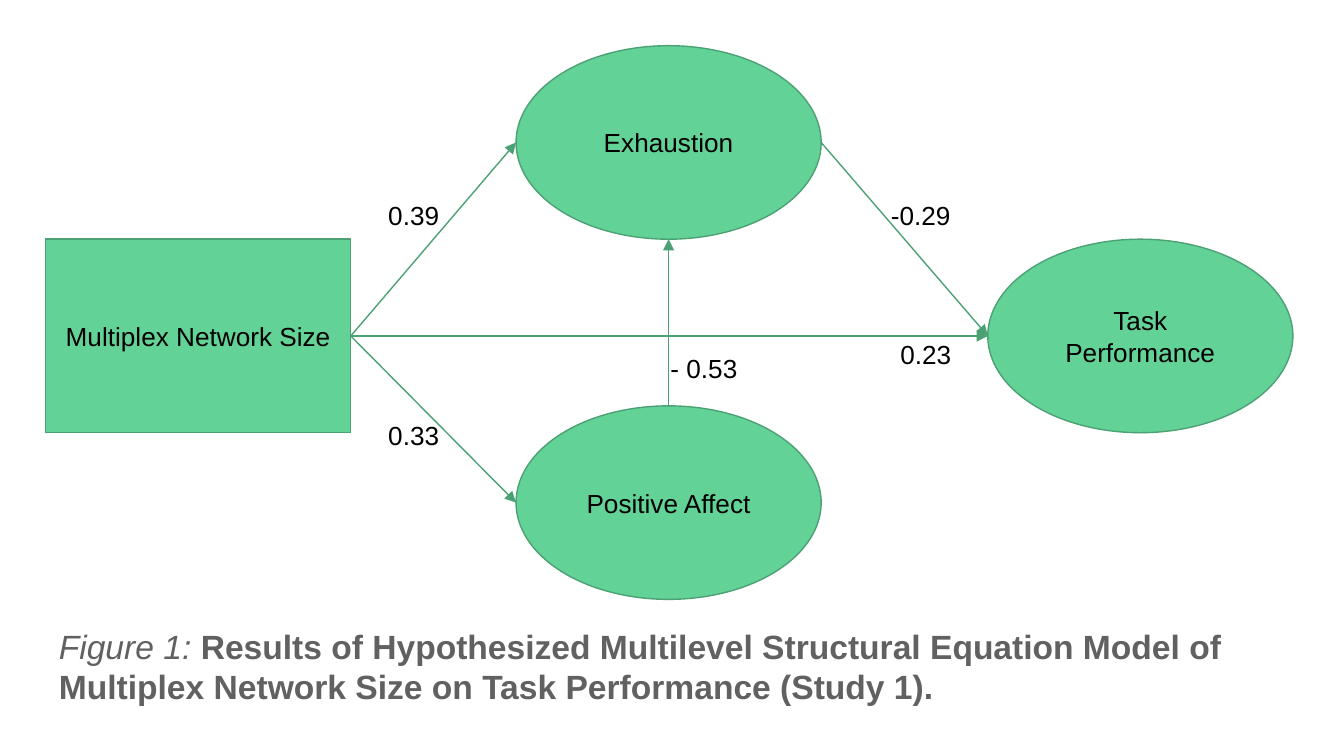
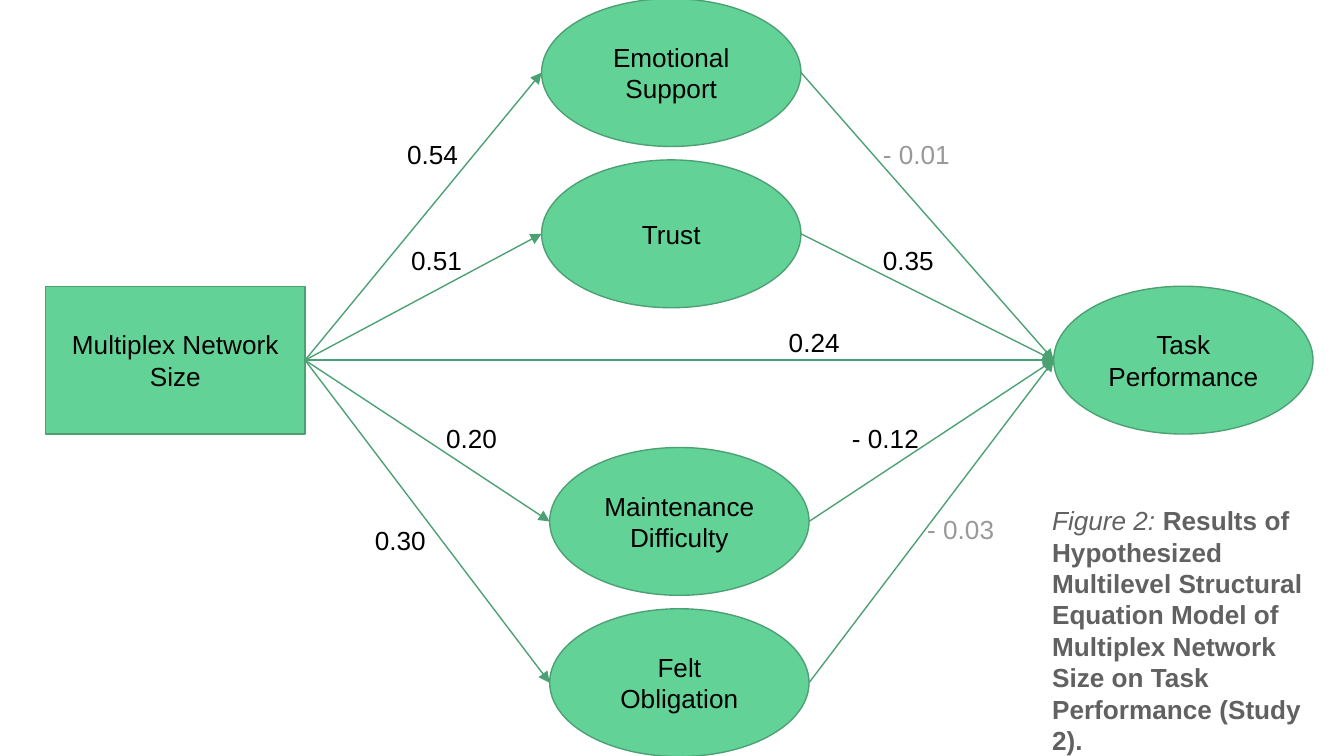
from dataclasses import dataclass
from lxml.etree import SubElement
from pptx import Presentation
from pptx.dml.color import RGBColor as RGB
from pptx.enum.shapes import MSO_CONNECTOR as LINE, MSO_SHAPE as SHAPE
from pptx.enum.text import MSO_ANCHOR as ANCHOR, PP_ALIGN as ALIGN
from pptx.oxml.ns import qn
from pptx.util import Inches, Pt


@dataclass(frozen=True)
class Theme:
    fill: RGB = RGB(0x63, 0xD2, 0x97)
    line: RGB = RGB(0x4B, 0xA1, 0x73)
    ink: RGB = RGB(0, 0, 0)
    faint: RGB = RGB(0x99, 0x99, 0x99)
    caption: RGB = RGB(0x61, 0x61, 0x61)
    font: str = "Arial"
    size: int = 14
    caption_sizes: tuple = (18, 14)
    weight: float = 0.75
    inset: float = 0.1
    label: tuple = (0.78, 0.31)


theme = Theme()
SOURCE, TARGET = "Multiplex Network Size", "Task Performance"
TITLE = ("Results of Hypothesized Multilevel Structural Equation Model of "
         "Multiplex Network Size on Task Performance (Study {}).")

# Nodes: name -> (column, row). Links: (from, to, coefficient, label left, label top).
figures = [
    dict(
        node=(2.27, 1.44), cols=(0.34, 3.84, 7.35), rows=(0.34, 1.78, 3.02),
        caption=(0.34, 4.63, 9.27, 0.65),
        nodes={"Exhaustion": (1, 0), "Positive Affect": (1, 2),
               TARGET: (2, 1), SOURCE: (0, 1)},
        links=[(SOURCE, "Exhaustion", "0.39", 2.79, 1.38),
               (SOURCE, "Positive Affect", "0.33", 2.79, 3.02),
               ("Positive Affect", "Exhaustion", "- 0.53", 4.89, 2.52),
               ("Exhaustion", TARGET, "-0.29", 6.53, 1.38),
               (SOURCE, TARGET, "0.23", 6.6, 2.42)],
        faint=()),
    dict(
        node=(1.93, 1.1), cols=(0.34, 4.03, 4.09, 7.84),
        rows=(-0.01, 1.19, 2.13, 3.33, 4.53),
        caption=(7.73, 3.96, 2.27, 1.46),
        nodes={SOURCE: (0, 2), "Emotional Support": (1, 0), "Trust": (1, 1),
               "Maintenance Difficulty": (2, 3), "Felt Obligation": (2, 4),
               TARGET: (3, 2)},
        links=[(SOURCE, "Emotional Support", "0.54", 2.93, 0.93),
               (SOURCE, "Trust", "0.51", 2.96, 1.72),
               ("Emotional Support", TARGET, "- 0.01", 6.47, 0.93),
               ("Felt Obligation", TARGET, "- 0.03", 6.8, 3.72),
               ("Trust", TARGET, "0.35", 6.47, 1.72),
               (SOURCE, TARGET, "0.24", 5.77, 2.33),
               ("Maintenance Difficulty", TARGET, "- 0.12", 6.24, 3.04),
               (SOURCE, "Maintenance Difficulty", "0.20", 3.22, 3.04),
               (SOURCE, "Felt Obligation", "0.30", 2.69, 3.8)],
        faint=("- 0.01", "- 0.03")),
]


def write(sp, runs, color=theme.ink, size=theme.size, anchor=ANCHOR.MIDDLE, align=ALIGN.LEFT):
    """Fill a shape with one paragraph of (text, bold, italic) runs."""
    tf = sp.text_frame
    tf.word_wrap, tf.vertical_anchor = True, anchor
    tf.margin_left = tf.margin_right = tf.margin_top = tf.margin_bottom = Inches(theme.inset)
    p = tf.paragraphs[0]
    p.alignment = align
    for text, bold, italic in runs:
        r = p.add_run()
        r.text = text
        r.font.name, r.font.size, r.font.color.rgb = theme.font, Pt(size), color
        r.font.bold, r.font.italic = bold, italic


def arrow(s, a, b):
    """Draw an arrow from a to b: upwards in one column, else left to right."""
    if a.left == b.left:
        ends = a.left + a.width // 2, a.top, b.left + b.width // 2, b.top + b.height
    else:
        ends = a.left + a.width, a.top + a.height // 2, b.left, b.top + b.height // 2
    c = s.shapes.add_connector(LINE.STRAIGHT, *ends)
    if a.auto_shape_type == SHAPE.RECTANGLE:
        c.begin_connect(a, 3)
    c.line.color.rgb, c.line.width = theme.line, Pt(theme.weight)
    sp_pr = c._element.spPr
    SubElement(sp_pr.get_or_add_ln(), qn("a:tailEnd"), type="triangle")
    SubElement(sp_pr, qn("a:effectLst"))


prs = Presentation()
prs.slide_width = Inches(10)
prs.slide_height = prs.slide_width * 9 // 16

for number, fig in enumerate(figures, 1):
    s = prs.slides.add_slide(prs.slide_layouts[6])

    # Caption
    sp = s.shapes.add_textbox(*map(Inches, fig["caption"]))
    write(sp, [(f"Figure {number}: ", False, True), (TITLE.format(number), True, False)],
          theme.caption, theme.caption_sizes[number - 1])

    # Variables: the observed one is a rectangle, the others are ellipses
    nodes = {}
    for name, (col, row) in fig["nodes"].items():
        kind = SHAPE.RECTANGLE if name == SOURCE else SHAPE.OVAL
        box = fig["cols"][col], fig["rows"][row], *fig["node"]
        sp = nodes[name] = s.shapes.add_shape(kind, *map(Inches, box))
        sp.shadow.inherit = False
        sp.fill.solid()
        sp.fill.fore_color.rgb = theme.fill
        sp.line.color.rgb, sp.line.width = theme.line, Pt(theme.weight)
        write(sp, [(name, False, False)], align=ALIGN.CENTER)

    # Paths
    for start, end, *_ in fig["links"]:
        arrow(s, nodes[start], nodes[end])

    # Coefficients
    for *_, value, left, top in fig["links"]:
        sp = s.shapes.add_textbox(*map(Inches, (left, top, *theme.label)))
        color = theme.faint if value in fig["faint"] else theme.ink
        write(sp, [(value, False, False)], color, anchor=ANCHOR.TOP)

prs.save("out.pptx")
